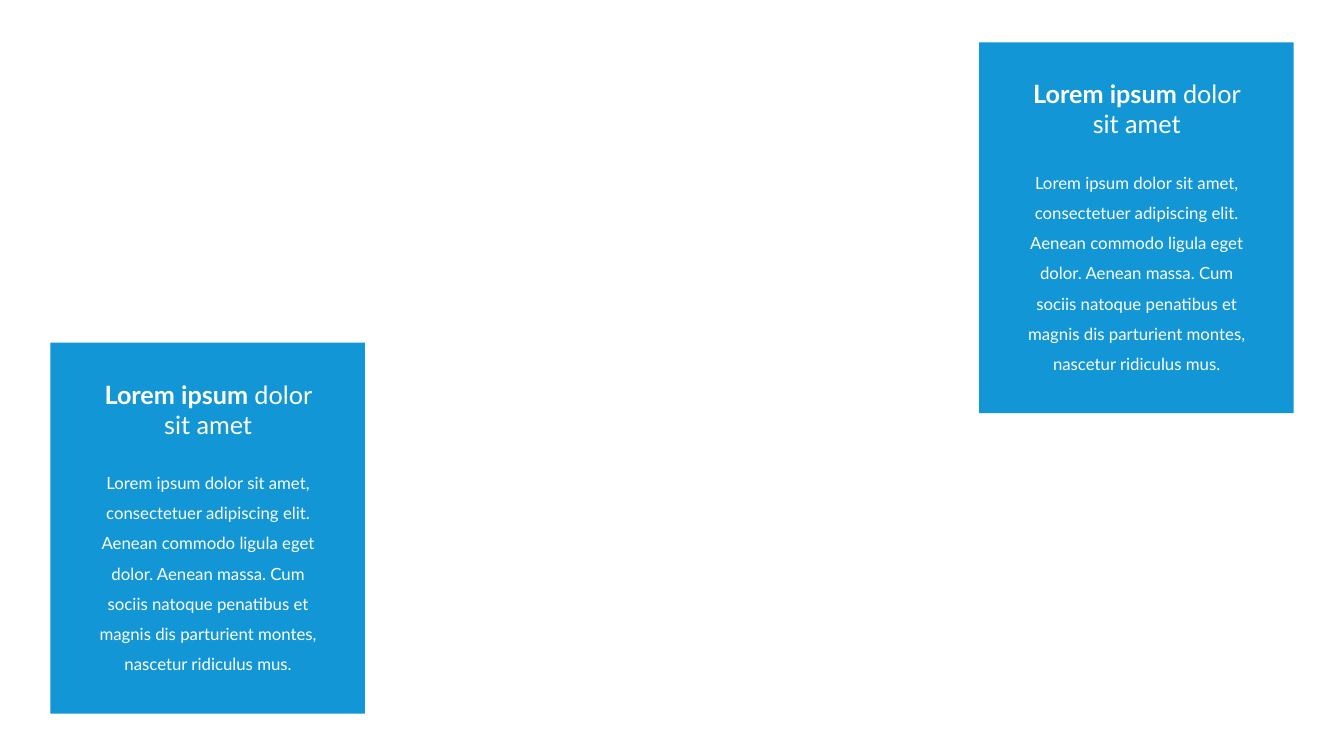
import pptx
import pptx.dml.color
import pptx.enum.shapes
import pptx.enum.text
import pptx.util
from pptx.util import Inches

BLUE = pptx.dml.color.RGBColor(0x12, 0x96, 0xD6)
WHITE = pptx.dml.color.RGBColor(0xFF, 0xFF, 0xFF)

HEADING = [("Lorem ipsum ", True), ("dolor sit amet", False)]
BODY = [(
    "Lorem ipsum dolor sit amet, consectetuer adipiscing elit. "
    "Aenean commodo ligula eget dolor. Aenean massa. Cum sociis natoque "
    "penatibus et magnis dis parturient montes, nascetur ridiculus mus.",
    False,
)]
CARD_CORNERS = [(0.5, 3.4), (9.71, 0.42)]


class SlideBuilder:
    """Holds the card style and the current slide."""

    font_name = "Lato"
    card_width, card_height = 3.12, 3.68
    text_inset, text_width = 0.3, 2.53

    def __init__(self, page):
        self.page = page

    def panel(self, left, top):
        box = self.page.shapes.add_shape(
            pptx.enum.shapes.MSO_SHAPE.RECTANGLE, Inches(left), Inches(top),
            Inches(self.card_width), Inches(self.card_height))
        box.shadow.inherit = False
        box.fill.solid()
        box.fill.fore_color.rgb = BLUE
        box.line.fill.background()

    def text(self, left, top, height, spans, size, line_spacing=1.0):
        box = self.page.shapes.add_textbox(
            Inches(left), Inches(top), Inches(self.text_width), Inches(height))
        frame = box.text_frame
        frame.word_wrap = True
        frame.auto_size = pptx.enum.text.MSO_AUTO_SIZE.SHAPE_TO_FIT_TEXT
        para = frame.paragraphs[0]
        para.alignment = pptx.enum.text.PP_ALIGN.CENTER
        para.line_spacing = line_spacing
        for words, bold in spans:
            span = para.add_run()
            span.text = words
            span.font.name = self.font_name
            span.font.size = pptx.util.Pt(size)
            span.font.bold = bold
            span.font.color.rgb = WHITE

    def card(self, left, top):
        self.panel(left, top)
        text_left = left + self.text_inset
        self.text(text_left, top + 1.14, 2.22, BODY, 12, line_spacing=1.5)
        self.text(text_left, top + 0.31, 0.71, HEADING, 18)


def main():
    deck = pptx.Presentation()
    deck.slide_width = Inches(13.33)
    deck.slide_height = Inches(7.5)

    # Blank layout
    builder = SlideBuilder(deck.slides.add_slide(deck.slide_layouts[6]))

    # Cards in opposite corners
    for left, top in CARD_CORNERS:
        builder.card(left, top)

    deck.save("out.pptx")


if __name__ == "__main__":
    main()
